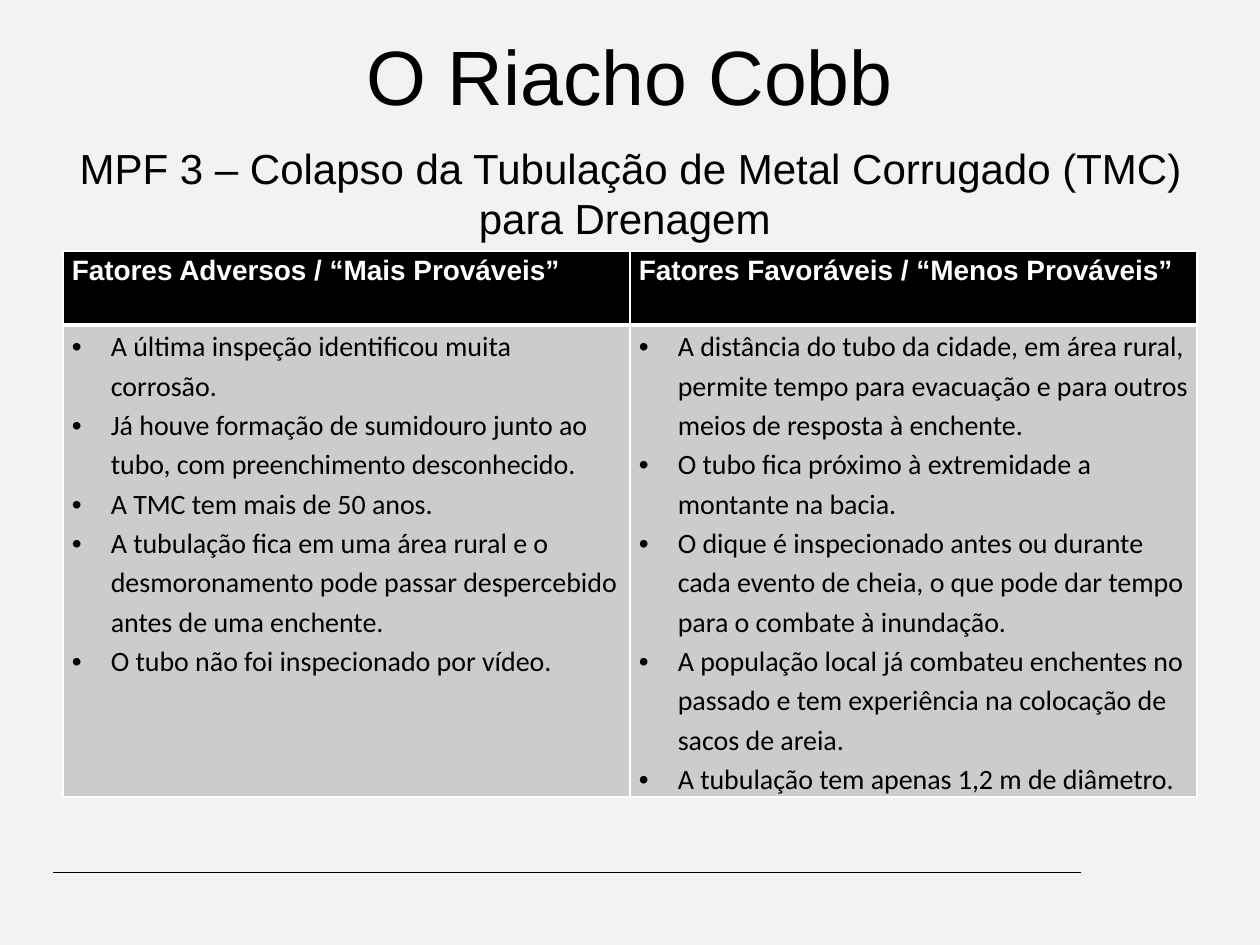
from lxml import etree
from pptx import Presentation
from pptx.dml.color import RGBColor
from pptx.enum.shapes import MSO_CONNECTOR
from pptx.enum.text import MSO_ANCHOR, PP_ALIGN
from pptx.oxml.ns import qn
from pptx.util import Inches, Pt

CENTER = PP_ALIGN.CENTER
MIDDLE = MSO_ANCHOR.MIDDLE
STRAIGHT = MSO_CONNECTOR.STRAIGHT

THEME = {
    "back": "F2F2F2", "ink": "000000", "paper": "FFFFFF", "body_fill": "CCCCCC",
    "head_font": "Arial", "body_font": "Calibri",
    "title": 44, "subtitle": 24, "table": 16,
}
INDENT = Inches(0.31)

COLUMNS = [
    ("Fatores Adversos / “Mais Prováveis”", [
        "A última inspeção identificou muita corrosão.",
        "Já houve formação de sumidouro junto ao tubo, com preenchimento desconhecido.",
        "A TMC tem mais de 50 anos.",
        "A tubulação fica em uma área rural e o desmoronamento pode passar "
        "despercebido antes de uma enchente.",
        "O tubo não foi inspecionado por vídeo.",
    ]),
    ("Fatores Favoráveis / “Menos Prováveis”", [
        "A distância do tubo da cidade, em área rural, permite tempo para "
        "evacuação e para outros meios de resposta à enchente.",
        "O tubo fica próximo à extremidade a montante na bacia.",
        "O dique é inspecionado antes ou durante cada evento de cheia, o que "
        "pode dar tempo para o combate à inundação.",
        "A população local já combateu enchentes no passado e tem experiência "
        "na colocação de sacos de areia.",
        "A tubulação tem apenas 1,2 m de diâmetro.",
    ]),
]


def add_run(p, text, size, font, color="ink", bold=False):
    r = p.add_run()
    r.text = text
    r.font.size, r.font.name, r.font.bold = Pt(THEME[size]), THEME[font], bold
    r.font.color.rgb = RGBColor.from_string(THEME[color])


def format_cell(cell, fill, bottom_width):
    cell.margin_left = cell.margin_right = Inches(0.07)
    cell.margin_top = cell.margin_bottom = 0
    pr = cell._tc.get_or_add_tcPr()
    for side, width in (("L", 1), ("R", 1), ("T", 1), ("B", bottom_width)):
        ln = etree.SubElement(pr, qn(f"a:ln{side}"), w=str(Pt(width)))
        paint = etree.SubElement(ln, qn("a:solidFill"))
        etree.SubElement(paint, qn("a:srgbClr"), val=THEME["paper"])
    cell.fill.solid()
    cell.fill.fore_color.rgb = RGBColor.from_string(THEME[fill])


prs = Presentation()
prs.slide_width, prs.slide_height = Inches(10), Inches(7.5)
W, H = prs.slide_width, prs.slide_height
s = prs.slides.add_slide(prs.slide_layouts[5])
s.background.fill.solid()
s.background.fill.fore_color.rgb = RGBColor.from_string(THEME["back"])

# Page grid: two equal columns between the side margins
margin = int(W * 0.05)
column = (W - 2 * margin) // 2

# Footer rule
y = int(H * 0.923)
rule = s.shapes.add_connector(STRAIGHT, int(W * 0.858), y, int(W * 0.042), y)
rule.line.width = Pt(0.75)
rule.line.color.rgb = RGBColor.from_string(THEME["ink"])
etree.SubElement(rule._element.spPr, qn("a:effectLst"))

# Title
title = s.shapes.title
title.left, title.top = margin, Inches(0.08)
title.width, title.height = 2 * column, Inches(1.03)
tf = title.text_frame
tf.vertical_anchor = MIDDLE
p = tf.paragraphs[0]
p.alignment = CENTER
add_run(p, "O Riacho Cobb", "title", "head_font")

# Table of factors
rows = [Inches(0.59), Inches(3.52)]
table = s.shapes.add_table(2, 2, margin, Inches(1.99), 2 * column, sum(rows)).table
for row, height in zip(table.rows, rows):
    row.height = height
for c, (heading, factors) in enumerate(COLUMNS):
    table.columns[c].width = column
    head, body = table.cell(0, c), table.cell(1, c)
    format_cell(head, "ink", 3)
    format_cell(body, "body_fill", 1)

    p = head.text_frame.paragraphs[0]
    p.line_spacing = 1.15
    add_run(p, heading, "table", "head_font", "paper", True)

    tf = body.text_frame
    for i, factor in enumerate(factors):
        p = tf.add_paragraph() if i else tf.paragraphs[0]
        p.line_spacing = 1.15
        pr = p._p.get_or_add_pPr()
        pr.set("marL", str(INDENT))
        pr.set("indent", str(-INDENT))
        etree.SubElement(pr, qn("a:buFont"), typeface="Arial")
        etree.SubElement(pr, qn("a:buChar"), char="•")
        add_run(p, factor, "table", "body_font")

# Subtitle
sp = s.shapes.add_textbox(int(W * 0.042), Inches(1.08), int(W * 0.917), Inches(0.91))
tf = sp.text_frame
tf.word_wrap = True
p = tf.paragraphs[0]
p.alignment = CENTER
add_run(p, "MPF 3 – Colapso da Tubulação de Metal Corrugado (TMC) para Drenagem ",
        "subtitle", "head_font")

prs.save("out.pptx")
